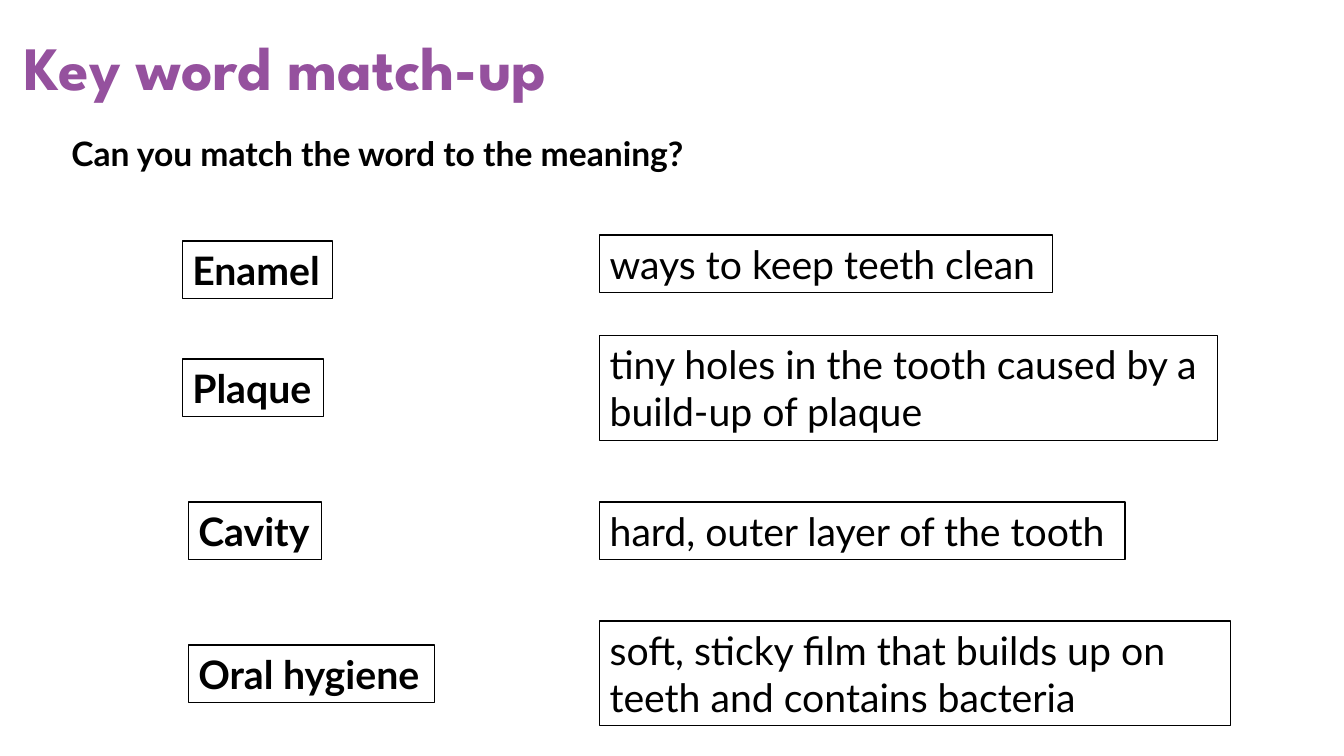
import pptx
import pptx.dml.color
import pptx.enum.shapes
import pptx.enum.text
import pptx.util

Pt = pptx.util.Pt
ANCHOR = pptx.enum.text.MSO_ANCHOR
PURPLE = pptx.dml.color.RGBColor(0x95, 0x51, 0x9E)
BLACK = pptx.dml.color.RGBColor(0, 0, 0)

TITLE_FORMAT = {"name": "League Spartan", "size": Pt(44), "bold": True}
QUESTION_FORMAT = {"name": "Lato", "size": Pt(24), "bold": True}
WORD_FORMAT = {"name": "Lato", "size": Pt(28), "bold": True}
MEANING_FORMAT = {"name": "Lato", "size": Pt(28), "bold": False}

# Text, left, top and width in points
WORDS = [
    ("Enamel", 130.3, 172.1, 107.3),
    ("Plaque", 130.3, 256.3, 100.8),
    ("Cavity", 134.6, 358.6, 95),
    ("Oral hygiene", 134.6, 460.8, 175.7),
]
MEANING_LEFT = 428.4
ONE_LINE, TWO_LINES = 41.2, 74.9
# Text, top, width and height in points
MEANINGS = [
    ("ways to keep teeth clean", 167.8, 323.3, ONE_LINE),
    ("tiny holes in the tooth caused by a\nbuild-up of plaque", 239.8, 441.4, TWO_LINES),
    ("hard, outer layer of the tooth", 358.6, 375.1, ONE_LINE),
    ("soft, sticky film that builds up on teeth and contains bacteria",
     443.5, 450.7, TWO_LINES),
]


class MatchUpSlide:
    def __init__(self, presentation):
        self.slide = presentation.slides.add_slide(presentation.slide_layouts[5])

    def set_text(self, shape, text, font_format, color, frame_format):
        frame = shape.text_frame
        frame.text = text
        frame_values = {
            "word_wrap": True,
            "auto_size": pptx.enum.text.MSO_AUTO_SIZE.NONE,
            "vertical_anchor": ANCHOR.TOP,
            "margin_left": Pt(7.2),
            "margin_right": 0,
            "margin_top": Pt(3.6),
            "margin_bottom": Pt(3.6),
            **frame_format,
        }
        for name, value in frame_values.items():
            setattr(frame, name, value)
        for paragraph in frame.paragraphs:
            paragraph.alignment = pptx.enum.text.PP_ALIGN.LEFT
            for name, value in font_format.items():
                setattr(paragraph.font, name, value)
            paragraph.font.color.rgb = color

    def title(self, text, left, top, width, height):
        shape = self.slide.shapes.title
        place = {"left": left, "top": top, "width": width, "height": height}
        for name, value in place.items():
            setattr(shape, name, Pt(value))
        self.set_text(shape, text, TITLE_FORMAT, PURPLE,
                      {"margin_left": Pt(27), "vertical_anchor": ANCHOR.BOTTOM})

    def question(self, text, *place):
        shape = self.slide.shapes.add_textbox(*map(Pt, place))
        self.set_text(shape, text, QUESTION_FORMAT, BLACK, {})

    def card(self, text, font_format, *place):
        shape = self.slide.shapes.add_shape(
            pptx.enum.shapes.MSO_SHAPE.RECTANGLE, *map(Pt, place))
        shape.shadow.inherit = False
        shape.fill.background()
        shape.line.color.rgb = BLACK
        shape.line.width = Pt(1)
        self.set_text(shape, text, font_format, BLACK, {})


def main():
    presentation = pptx.Presentation()
    presentation.slide_width = Pt(960)
    presentation.slide_height = Pt(540)
    match_up = MatchUpSlide(presentation)

    # Heading
    match_up.title("Key word match-up", -9.4, 16.6, 499.7, 60.5)
    match_up.question("Can you match the word to the meaning?", 43.9, 91.4, 464.4, 36)

    # Key words on the left
    for text, left, top, width in WORDS:
        match_up.card(text, WORD_FORMAT, left, top, width, ONE_LINE)

    # Meanings on the right
    for text, top, width, height in MEANINGS:
        match_up.card(text, MEANING_FORMAT, MEANING_LEFT, top, width, height)

    presentation.save("out.pptx")


if __name__ == "__main__":
    main()
